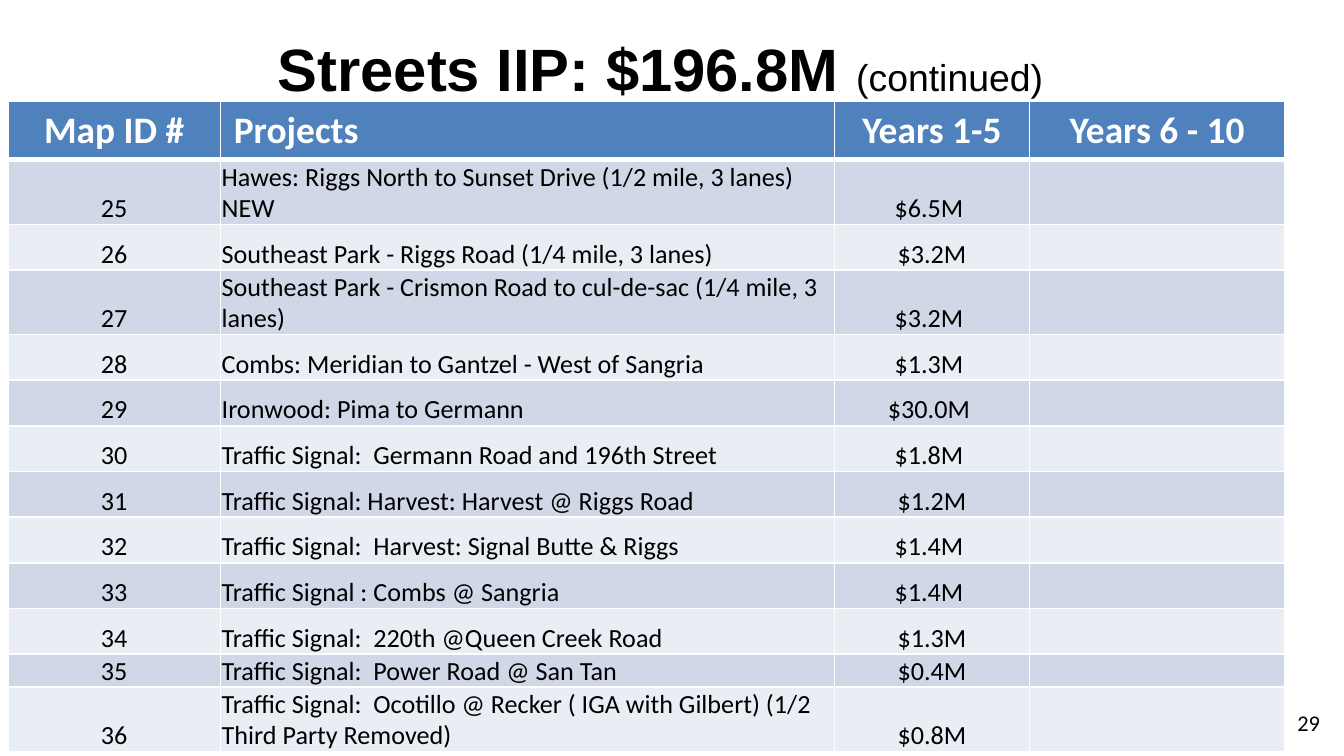
from lxml import etree
from pptx import Presentation
from pptx import util as u
from pptx.dml.color import RGBColor
from pptx.enum import text
from pptx.oxml.ns import qn

COLORS = {"ink": "000000", "paper": "FFFFFF", "header": "4F81BD",
          "odd": "D0D8E8", "even": "E9EDF4"}
CENTER, LEFT, RIGHT = text.PP_ALIGN.CENTER, text.PP_ALIGN.LEFT, text.PP_ALIGN.RIGHT


def add_span(para, words, size, font="Calibri", color="ink", bold=False):
    span = para.add_run()
    span.text = words
    span.font.size = u.Pt(size)
    span.font.name = font
    span.font.bold = bold
    span.font.color.rgb = RGBColor.from_string(COLORS[color])


def style_cell(cell, fill, top=1, bottom=1):
    """Fill the cell and give it white borders, widths in points."""
    props = cell._tc.get_or_add_tcPr()
    for side, width in (("lnL", 1), ("lnR", 1), ("lnT", top), ("lnB", bottom)):
        line = etree.SubElement(props, qn(f"a:{side}"), w=str(u.Pt(width)))
        solid = etree.SubElement(line, qn("a:solidFill"))
        etree.SubElement(solid, qn("a:srgbClr"), val=COLORS["paper"])
    cell.fill.solid()
    cell.fill.fore_color.rgb = RGBColor.from_string(COLORS[fill])


deck = Presentation()
deck.slide_width, deck.slide_height = u.Inches(10), u.Inches(10 * 9 / 16)
page = deck.slides.add_slide(deck.slide_layouts[6])

# Title
title = page.shapes.add_textbox(u.Inches(0.25), u.Inches(0.03), u.Inches(9.33), u.Inches(0.94))
title.text_frame.word_wrap = True
title.text_frame.vertical_anchor = text.MSO_ANCHOR.MIDDLE
para = title.text_frame.paragraphs[0]
para.alignment = CENTER
add_span(para, "Streets IIP: $196.8M ", 32, "Arial", bold=True)
add_span(para, "(continued)", 20, "Arial")

# Page number
number = page.shapes.add_textbox(u.Inches(9.42), u.Inches(5.23), u.Inches(0.5), u.Inches(0.3))
number.text_frame.word_wrap = True
para = number.text_frame.paragraphs[0]
para.alignment = RIGHT
add_span(para, "29", 12)

# Project table
headings = ["Map ID #", "Projects", "Years 1-5", "Years 6 - 10"]
alignments = [CENTER, LEFT, CENTER, CENTER]
column_widths = [1.58, 4.57, 1.45, 1.9]
header_height, one_line, two_lines, tight = 0.44, 0.34, 0.48, 0.24
first_id = 25
projects = [
    ("Hawes: Riggs North to Sunset Drive (1/2 mile, 3 lanes) NEW", "$6.5M ", two_lines),
    ("Southeast Park - Riggs Road (1/4 mile, 3 lanes)", "$3.2M", one_line),
    ("Southeast Park - Crismon Road to cul-de-sac (1/4 mile, 3 lanes)", "$3.2M ", two_lines),
    ("Combs: Meridian to Gantzel - West of Sangria", "$1.3M ", one_line),
    ("Ironwood: Pima to Germann", "$30.0M ", one_line),
    ("Traffic Signal:  Germann Road and 196th Street", "$1.8M ", one_line),
    ("Traffic Signal: Harvest: Harvest @ Riggs Road", "$1.2M", one_line),
    ("Traffic Signal:  Harvest: Signal Butte & Riggs", "$1.4M ", one_line),
    ("Traffic Signal : Combs @ Sangria", "$1.4M ", one_line),
    ("Traffic Signal:  220th @Queen Creek Road", "$1.3M", one_line),
    ("Traffic Signal:  Power Road @ San Tan", "$0.4M", tight),
    ("Traffic Signal:  Ocotillo @ Recker ( IGA with Gilbert) (1/2 Third Party Removed)",
     "$0.8M", two_lines),
]
heights = [header_height] + [height for _, _, height in projects]
table = page.shapes.add_table(
    len(heights), len(headings), u.Inches(0.06), u.Inches(0.75),
    u.Inches(sum(column_widths)), u.Inches(sum(heights))).table
for column, width in zip(table.columns, column_widths):
    column.width = u.Inches(width)
for row, height in zip(table.rows, heights):
    row.height = u.Inches(height)

for col, heading in enumerate(headings):
    cell = table.cell(0, col)
    style_cell(cell, "header", bottom=3)
    para = cell.text_frame.paragraphs[0]
    para.alignment = alignments[col]
    add_span(para, heading, 20, color="paper", bold=True)

for row, (project, cost, _) in enumerate(projects, start=1):
    values = [str(first_id + row - 1), project, cost, ""]
    for col, value in enumerate(values):
        cell = table.cell(row, col)
        style_cell(cell, "odd" if row % 2 else "even", top=3 if row == 1 else 1)
        cell.vertical_anchor = text.MSO_ANCHOR.BOTTOM
        cell.margin_left = cell.margin_right = cell.margin_top = u.Inches(0.01)
        cell.margin_bottom = 0
        para = cell.text_frame.paragraphs[0]
        para.alignment = alignments[col]
        if value:
            add_span(para, value, 14)
        else:  # keeps an empty cell from stretching its row
            etree.SubElement(para._p, qn("a:endParaRPr"), sz="1400")

deck.save("out.pptx")
